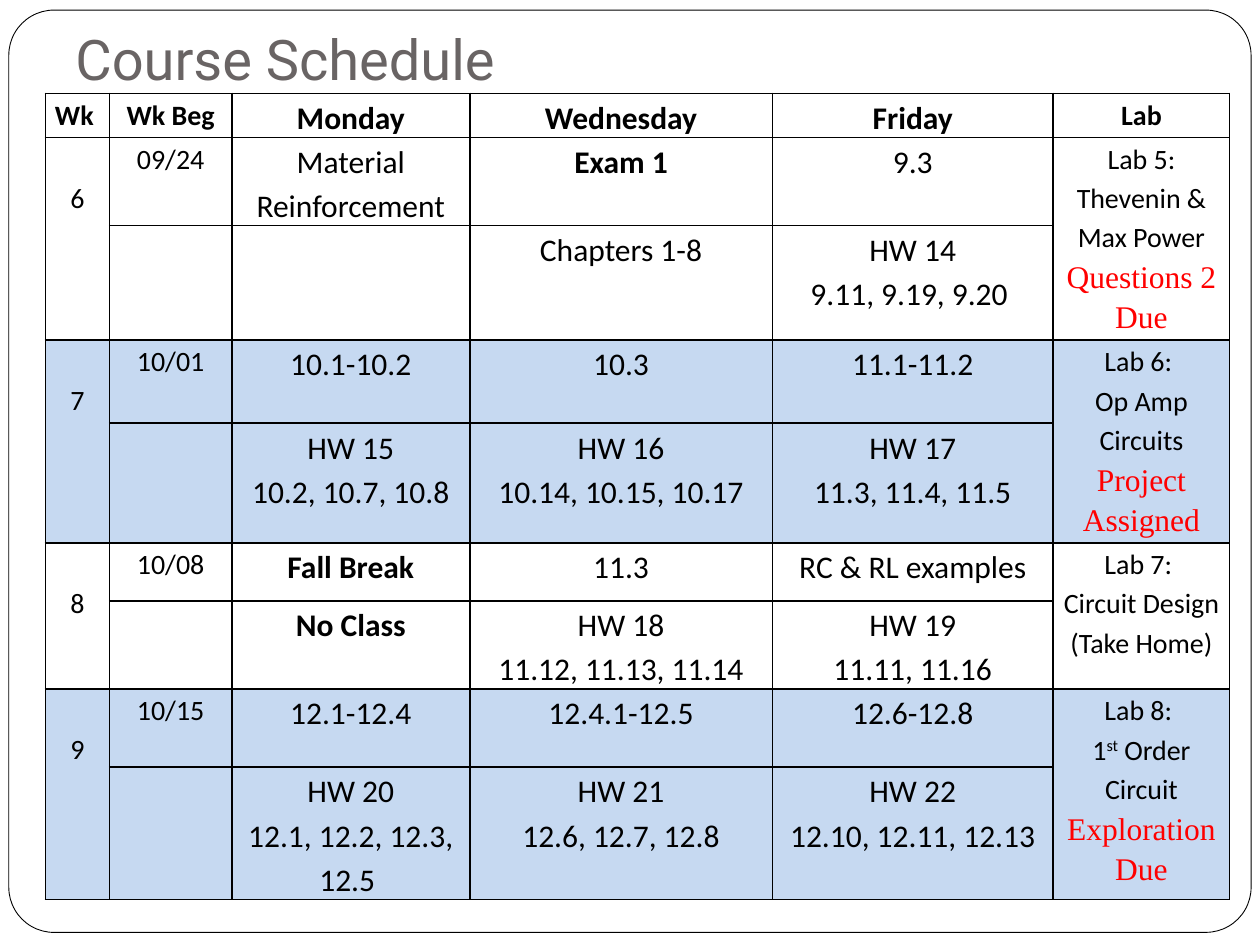
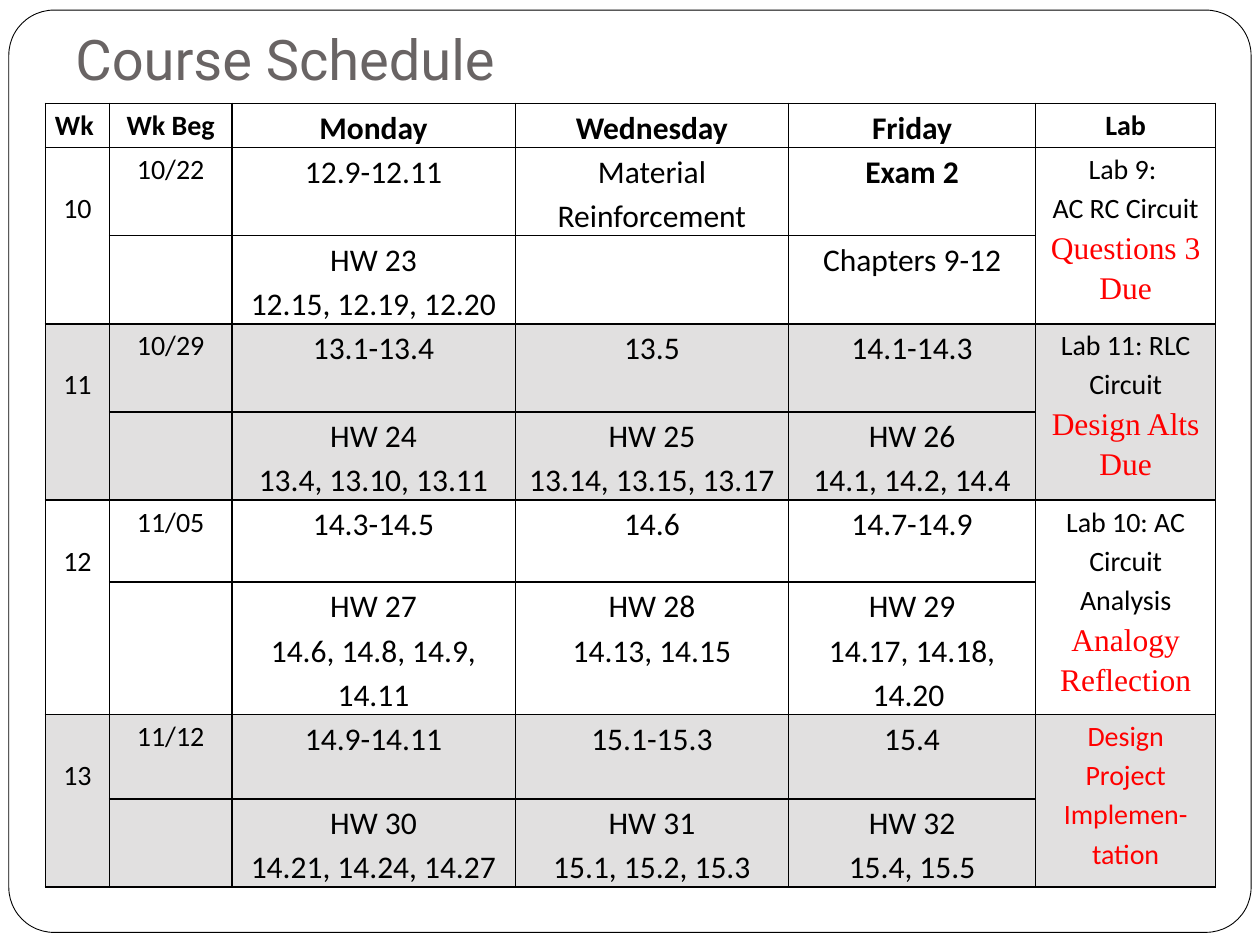
from lxml import etree
from pptx import Presentation
from pptx.dml.color import RGBColor
from pptx.enum.shapes import MSO_SHAPE
from pptx.enum.text import MSO_ANCHOR, PP_ALIGN
from pptx.oxml.ns import qn
from pptx.util import Inches, Pt

ROUND_RECT = MSO_SHAPE.ROUNDED_RECTANGLE
BOTTOM = MSO_ANCHOR.BOTTOM
CENTER = PP_ALIGN.CENTER

BLACK, WHITE, RED, GREY = "000000", "FFFFFF", "FF0000", "696464"
BLUE_BAND, GREY_BAND = "C6D9F1", "E1E0E0"

# Text styles: size, font, colour, bold
TITLE = (32, "Roboto", GREY, False)
HEAD_SMALL = (16, "Calibri", BLACK, True)
DAY_BOLD = (18, "Calibri", BLACK, True)
DAY = (18, "Calibri", BLACK, False)
SMALL = (16, "Calibri", BLACK, False)
DUE = (18, "Times New Roman", RED, False)
PROJECT = (16, "Calibri", RED, False)

# Content
HEADINGS = [("Wk ", HEAD_SMALL), ("Wk Beg", HEAD_SMALL), ("Monday", DAY_BOLD),
            ("Wednesday", DAY_BOLD), ("Friday", DAY_BOLD), ("Lab", HEAD_SMALL)]
BOLD_ENTRIES = {"Exam 1", "Exam 2", "Fall Break", "No Class"}

# Each week: number, first day, topics by day, homework lines by day, lab lines.
# A lab line is a list of runs; "^" marks a superscript run.
SCHEDULES = [
    dict(top=0.74, band=BLUE_BAND,
         cols=[0.51, 0.97, 1.89, 2.4, 2.23, 1.4],
         rows=[0.35, 0.7, 0.87, 0.66, 0.91, 0.46, 0.7, 0.62, 1.05],
         weeks=[
             ("6", "09/24", ["Material Reinforcement", "Exam 1", "9.3"],
              [[], ["Chapters 1-8"], ["HW 14", "9.11, 9.19, 9.20 "]],
              [(["Lab 5: Thevenin & Max Power"], SMALL),
               (["Questions 2 Due"], DUE)]),
             ("7", "10/01", ["10.1-10.2", "10.3", "11.1-11.2"],
              [["HW 15", "10.2, 10.7, 10.8"],
               ["HW 16", "10.14, 10.15, 10.17"],
               ["HW 17", "11.3, 11.4, 11.5"]],
              [(["Lab 6: "], SMALL), (["Op Amp Circuits"], SMALL),
               (["Project Assigned"], DUE)]),
             ("8", "10/08", ["Fall Break", "11.3", "RC & RL examples"],
              [["No Class"],
               ["HW 18", "11.12, 11.13, 11.14"],
               ["HW 19", "11.11, 11.16"]],
              [(["Lab 7: "], SMALL),
               (["Circuit Design (Take Home)"], SMALL)]),
             ("9", "10/15", ["12.1-12.4", "12.4.1-12.5", "12.6-12.8"],
              [["HW 20", "12.1, 12.2, 12.3, 12.5 "],
               ["HW 21", "12.6, 12.7, 12.8"],
               ["HW 22", "12.10, 12.11, 12.13"]],
              [(["Lab 8: "], SMALL), (["1", "^st", " Order Circuit"], SMALL),
               (["Exploration Due"], DUE)]),
         ]),
    dict(top=0.82, band=GREY_BAND,
         cols=[0.51, 0.97, 2.25, 2.17, 1.96, 1.43],
         rows=[0.35, 0.7, 0.7, 0.7, 0.7, 0.65, 1.05, 0.67, 0.7],
         weeks=[
             ("10", "10/22", ["12.9-12.11", "Material Reinforcement", "Exam 2"],
              [["HW 23", "12.15, 12.19, 12.20"], [], ["Chapters 9-12"]],
              [(["Lab 9: "], SMALL), (["AC RC Circuit"], SMALL),
               (["Questions 3 Due"], DUE)]),
             ("11", "10/29", ["13.1-13.4", "13.5", "14.1-14.3"],
              [["HW 24", "13.4, 13.10, 13.11"],
               ["HW 25", "13.14, 13.15, 13.17"],
               ["HW 26", "14.1, 14.2, 14.4"]],
              [(["Lab 11: RLC Circuit"], SMALL), (["Design Alts Due"], DUE)]),
             ("12", "11/05", ["14.3-14.5", "14.6", "14.7-14.9"],
              [["HW 27", "14.6, 14.8, 14.9, 14.11"],
               ["HW 28", "14.13, 14.15"],
               ["HW 29", "14.17, 14.18, 14.20 "]],
              [(["Lab 10: AC Circuit Analysis"], SMALL),
               (["Analogy Reflection"], DUE)]),
             ("13", "11/12", ["14.9-14.11", "15.1-15.3", "15.4"],
              [["HW 30", "14.21, 14.24, 14.27"],
               ["HW 31", "15.1, 15.2, 15.3"],
               ["HW 32", "15.4, 15.5"]],
              [(["Design Project Implemen-tation"], PROJECT)]),
         ]),
]


def rgb(color):
    return RGBColor.from_string(color)


def add_run(p, text, style):
    size, font, color, bold = style
    r = p.add_run()
    r.text = text.removeprefix("^")
    r.font.size, r.font.name, r.font.bold = Pt(size), font, bold
    r.font.color.rgb = rgb(color)
    if text.startswith("^"):
        r._r.get_or_add_rPr().set("baseline", "30000")


def set_margins(box, left, top, right, bottom):
    box.margin_left, box.margin_top = Inches(left), Inches(top)
    box.margin_right, box.margin_bottom = Inches(right), Inches(bottom)


def add_frame_and_title(s):
    sp = s.shapes.add_shape(ROUND_RECT, Inches(0.07), Inches(0.08),
                            Inches(9.86), Inches(7.32))
    sp.adjustments[0] = 0.049
    sp.shadow.inherit = False
    sp.fill.solid()
    sp.fill.fore_color.rgb = rgb(WHITE)
    sp.line.color.rgb = rgb(BLACK)
    sp.line.width = Pt(0.5)

    tf = s.shapes.add_textbox(Inches(0.5), Inches(0.28),
                              Inches(9), Inches(0.55)).text_frame
    tf.word_wrap = True
    tf.vertical_anchor = BOTTOM
    set_margins(tf, 0.1, 0.05, 0.1, 0.1)
    add_run(tf.paragraphs[0], "Course Schedule", TITLE)


def format_cell(cell, band):
    set_margins(cell, 0.07, 0, 0.07, 0)
    tc_pr = cell._tc.get_or_add_tcPr()
    for side in ("a:lnL", "a:lnR", "a:lnT", "a:lnB"):
        ln = etree.SubElement(tc_pr, qn(side), w=str(Pt(1)))
        fill = etree.SubElement(ln, qn("a:solidFill"))
        etree.SubElement(fill, qn("a:srgbClr"), val=BLACK)
    if band:
        cell.fill.solid()
        cell.fill.fore_color.rgb = rgb(band)
    else:
        cell.fill.background()


def write_cell(cell, lines):
    tf = cell.text_frame
    for i, (runs, style) in enumerate(lines):
        p = tf.add_paragraph() if i else tf.paragraphs[0]
        p.alignment = CENTER
        p.line_spacing = 1.15
        for text in runs:
            add_run(p, text, style)


def day_lines(entries):
    return [([e], DAY_BOLD if e in BOLD_ENTRIES else DAY) for e in entries]


def add_schedule(s, top, band, cols, rows, weeks):
    table = s.shapes.add_table(len(rows), len(cols), Inches(0.36), Inches(top),
                               Inches(sum(cols)), Inches(sum(rows))).table
    table.first_row = table.horz_banding = False
    for column, width in zip(table.columns, cols):
        column.width = Inches(width)
    for row, height in zip(table.rows, rows):
        row.height = Inches(height)

    # Every second week is shaded
    for i in range(len(rows)):
        for j in range(len(cols)):
            format_cell(table.cell(i, j), band if i and (i - 1) // 2 % 2 else None)

    for j, (heading, style) in enumerate(HEADINGS):
        write_cell(table.cell(0, j), [([heading], style)])

    # Two rows per week: topics above homework
    last = len(cols) - 1
    for w, (number, begins, topics, homework, lab) in enumerate(weeks):
        i = 1 + 2 * w
        for j in (0, last):
            table.cell(i, j).merge(table.cell(i + 1, j))
        table.cell(i, 0).margin_top = Inches(0.31)
        write_cell(table.cell(i, 0), [([number], SMALL)])
        write_cell(table.cell(i, 1), [([begins], SMALL)])
        for j, (topic, tasks) in enumerate(zip(topics, homework), start=2):
            write_cell(table.cell(i, j), day_lines([topic]))
            write_cell(table.cell(i + 1, j), day_lines(tasks))
        write_cell(table.cell(i, last), lab)


def main():
    prs = Presentation()
    prs.slide_width, prs.slide_height = Inches(10), Inches(7.5)
    for schedule in SCHEDULES:
        s = prs.slides.add_slide(prs.slide_layouts[6])
        add_frame_and_title(s)
        add_schedule(s, **schedule)
    prs.save("out.pptx")


if __name__ == "__main__":
    main()
